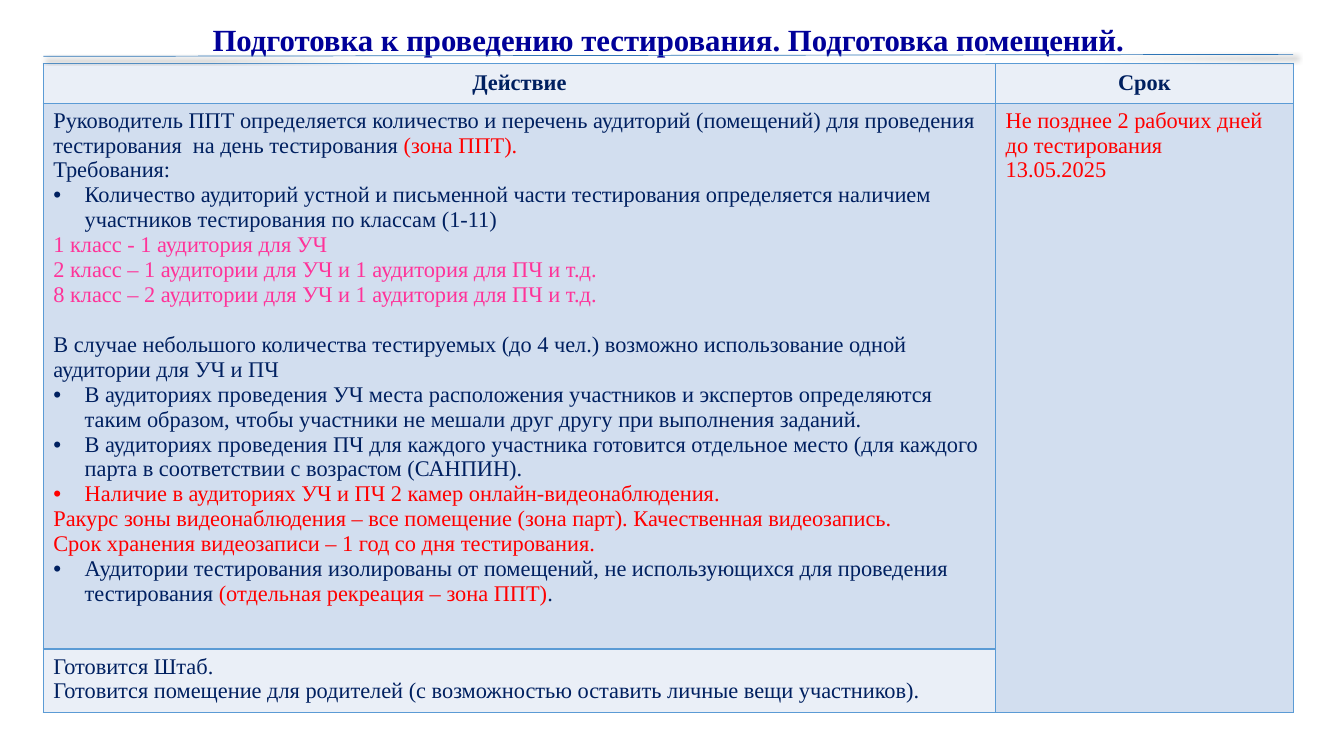
from lxml import etree
from pptx import Presentation
from pptx.dml.color import RGBColor
from pptx.enum.shapes import MSO_CONNECTOR
from pptx.enum.text import MSO_ANCHOR, PP_ALIGN
from pptx.oxml import parse_xml
from pptx.oxml.ns import nsdecls, qn
from pptx.util import Cm, Pt

STRAIGHT = MSO_CONNECTOR.STRAIGHT
CENTER, LEFT = PP_ALIGN.CENTER, PP_ALIGN.LEFT
TOP, MIDDLE, BOTTOM = MSO_ANCHOR.TOP, MSO_ANCHOR.MIDDLE, MSO_ANCHOR.BOTTOM

FONT = "Times New Roman"
TITLE_BLUE = RGBColor(0x00, 0x00, 0x99)
NAVY = RGBColor(0x00, 0x20, 0x60)
RED = RGBColor(0xFF, 0x00, 0x00)
PINK = RGBColor(0xFF, 0x33, 0x99)
RULE_BLUE = RGBColor(0x2E, 0x75, 0xB6)
BORDER_BLUE = RGBColor(0x5B, 0x9B, 0xD5)
PALE = RGBColor(0xEA, 0xEF, 0xF7)
LIGHT = RGBColor(0xD2, 0xDE, 0xEF)

LEFT_EDGE, WIDTH = Cm(1.09), Cm(31.5)
TABLE_TOP = Cm(1.6)
COLUMNS = (Cm(24), Cm(7.5))
ROWS = (Cm(1), Cm(12.8), Cm(1.57))
INDENT = Cm(0.79)
GAP = Pt(18)

# Each paragraph: (runs as (text, colour), bulleted, space before)
REQUIREMENTS = [
    ([("Руководитель ППТ определяется количество и перечень аудиторий (помещений) "
       "для проведения тестирования  на день тестирования ", NAVY),
      ("(зона ППТ).", RED)], False, 0),
    ([("Требования:", NAVY)], False, 0),
    ([("Количество аудиторий устной и письменной части тестирования определяется "
       "наличием участников тестирования по классам (1-11)", NAVY)], True, 0),
    ([("1 класс - 1 аудитория для УЧ", PINK)], False, 0),
    ([("2 класс – 1 аудитории для УЧ и 1 аудитория для ПЧ и т.д.", PINK)], False, 0),
    ([("8 класс – 2 аудитории для УЧ и 1 аудитория для ПЧ и т.д.", PINK)], False, 0),
    ([("В случае небольшого количества тестируемых (до 4 чел.) возможно "
       "использование одной аудитории для УЧ и ПЧ", NAVY)], False, GAP),
    ([("В аудиториях проведения УЧ места расположения участников и экспертов "
       "определяются таким образом, чтобы участники не мешали друг другу при "
       "выполнения заданий.", NAVY)], True, 0),
    ([("В аудиториях проведения ПЧ для каждого участника готовится отдельное место "
       "(для каждого парта в соответствии с возрастом (САНПИН).", NAVY)], True, 0),
    ([("Наличие в аудиториях УЧ и ПЧ 2 камер онлайн-видеонаблюдения.", RED)], True, 0),
    ([("Ракурс зоны видеонаблюдения – все помещение (зона парт). "
       "Качественная видеозапись.", RED)], False, 0),
    ([("Срок хранения видеозаписи – 1 год со дня тестирования.", RED)], False, 0),
    ([("Аудитории тестирования изолированы от помещений, не использующихся для "
       "проведения тестирования ", NAVY),
      ("(отдельная рекреация – зона ППТ)", RED), (".", NAVY)], True, 0),
]
DEADLINE = [
    ([("Не позднее 2 рабочих дней до тестирования", RED)], False, 0),
    ([("13.05.2025", RED)], False, 0),
]
ROOMS = [
    ([("Готовится Штаб.", NAVY)], False, 0),
    ([("Готовится помещение для родителей (с возможностью оставить личные вещи "
       "участников).", NAVY)], False, 0),
]


def add_run(p, text, size, color, bold=False):
    r = p.add_run()
    r.text = text
    r.font.name, r.font.size, r.font.bold = FONT, Pt(size), bold
    r.font.color.rgb = color


def add_bullet(p):
    pPr = p._p.get_or_add_pPr()
    pPr.set("marL", str(INDENT))
    pPr.set("indent", str(-INDENT))
    etree.SubElement(pPr, qn("a:buFont"), typeface="Arial")
    etree.SubElement(pPr, qn("a:buChar"), char="•")


def add_title(s, text):
    tf = s.shapes.add_textbox(LEFT_EDGE, 0, WIDTH, TABLE_TOP).text_frame
    tf.word_wrap = True
    tf.vertical_anchor = BOTTOM
    p = tf.paragraphs[0]
    p.alignment, p.line_spacing = CENTER, 0.9
    add_run(p, text, 22, TITLE_BLUE, bold=True)


def add_rule(s):
    rule = s.shapes.add_connector(STRAIGHT, LEFT_EDGE, Cm(1.42), LEFT_EDGE + WIDTH, Cm(1.37))
    rule.line.color.rgb, rule.line.width = RULE_BLUE, Pt(0.5)
    rule._element.spPr.append(parse_xml(
        f'<a:effectLst {nsdecls("a")}>'
        f'<a:outerShdw blurRad="{Pt(4)}" dist="{Pt(3)}" dir="2700000" algn="tl" rotWithShape="0">'
        '<a:srgbClr val="000000"><a:alpha val="40000"/></a:srgbClr>'
        '</a:outerShdw></a:effectLst>'))


def style_cell(cell, fill):
    tcPr = cell._tc.get_or_add_tcPr()
    for side in ("lnL", "lnR", "lnT", "lnB"):
        tcPr.append(parse_xml(
            f'<a:{side} {nsdecls("a")} w="{Pt(1)}"><a:solidFill>'
            f'<a:srgbClr val="{BORDER_BLUE}"/></a:solidFill></a:{side}>'))
    cell.fill.solid()
    cell.fill.fore_color.rgb = fill


def fill_cell(cell, paragraphs, header=False):
    cell.vertical_anchor = MIDDLE if header else TOP
    tf = cell.text_frame
    for i, (runs, bulleted, before) in enumerate(paragraphs):
        p = tf.add_paragraph() if i else tf.paragraphs[0]
        p.alignment = CENTER if header else LEFT
        if before:
            p.space_before = before
        if bulleted:
            add_bullet(p)
        for text, color in runs:
            add_run(p, text, 16, color, bold=header)


def add_plan_table(s):
    table = s.shapes.add_table(len(ROWS), len(COLUMNS), LEFT_EDGE, TABLE_TOP,
                               WIDTH, sum(ROWS)).table
    table.first_row = table.horz_banding = False
    for column, width in zip(table.columns, COLUMNS):
        column.width = width
    for row, height in zip(table.rows, ROWS):
        row.height = height

    # Fills and borders
    for row, fills in enumerate(((PALE, PALE), (LIGHT, LIGHT), (PALE, LIGHT))):
        for col, fill in enumerate(fills):
            style_cell(table.cell(row, col), fill)
    table.cell(1, 1).merge(table.cell(2, 1))

    # Wording
    for col, heading in enumerate(("Действие", "Срок")):
        fill_cell(table.cell(0, col), [([(heading, NAVY)], False, 0)], header=True)
    fill_cell(table.cell(1, 0), REQUIREMENTS)
    fill_cell(table.cell(1, 1), DEADLINE)
    fill_cell(table.cell(2, 0), ROOMS)


def main():
    prs = Presentation()
    prs.slide_width, prs.slide_height = Cm(33.87), Cm(19.05)
    s = prs.slides.add_slide(prs.slide_layouts[6])
    add_title(s, "Подготовка к проведению тестирования. Подготовка помещений.")
    add_plan_table(s)
    add_rule(s)
    prs.save("out.pptx")


if __name__ == "__main__":
    main()
